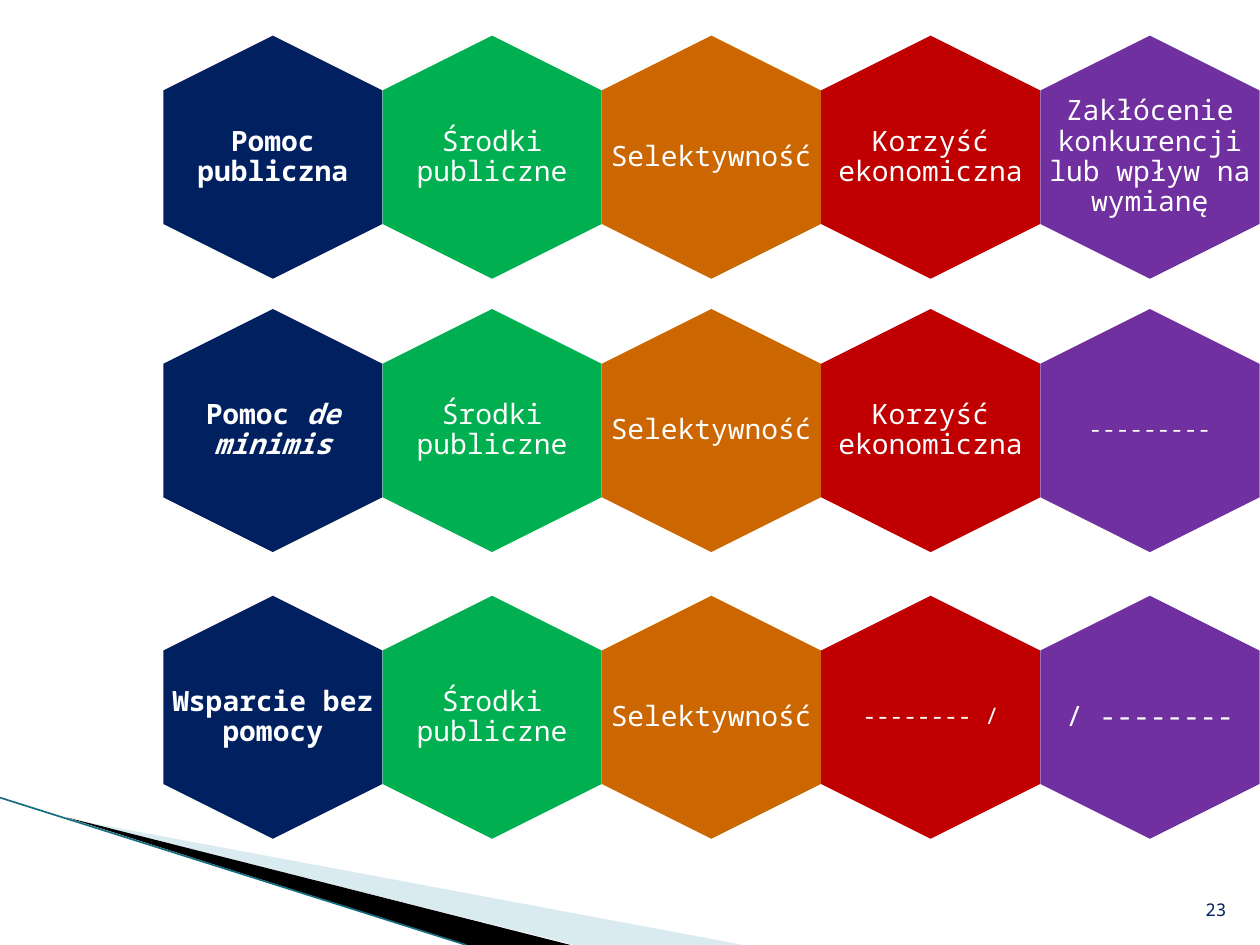
import dataclasses
import typing

import lxml.etree
import pptx
import pptx.dml.color
import pptx.enum.shapes
import pptx.enum.text
import pptx.oxml
import pptx.oxml.ns
import pptx.util

Cm = pptx.util.Cm
Pt = pptx.util.Pt


@dataclasses.dataclass(frozen=True)
class Theme:
    font: str = "Noto Sans Mono"
    white: str = "FFFFFF"
    navy: str = "002060"
    black: str = "000000"
    pale_blue: str = "A0CBDC"
    teal: str = "146E82"
    columns: tuple[str, ...] = ("002060", "00B050", "CC6600", "C00000", "7030A0")
    label_size: float = 16
    dash_size: float = 13
    number_size: float = 10


class TextRun(typing.NamedTuple):
    text: str
    bold: bool = False
    italic: bool = False


class Label(typing.NamedTuple):
    runs: tuple[TextRun, ...]
    small: bool = False


class AidRow(typing.NamedTuple):
    center: float
    labels: tuple[Label, ...]


class Box(typing.NamedTuple):
    left: float
    top: float
    width: float
    height: float


THEME = Theme()
FIRST_CENTER = 5.5
HEXAGON_LENGTH = 4.9
HEXAGON_WIDTH = 4.42
LABEL_HEIGHT = 3.38
SMALL_LABEL_WIDTH = 3.05


def plain(text: str, small: bool = False) -> Label:
    return Label((TextRun(text),), small)


def heading(text: str, italic_text: str = "") -> Label:
    runs = (TextRun(text, bold=True),)
    if italic_text:
        runs += (TextRun(italic_text, bold=True, italic=True),)
    return Label(runs)


FUNDS = plain("Środki publiczne")
SELECTIVITY = plain("Selektywność")
BENEFIT = plain("Korzyść ekonomiczna")
DISTORTION = plain("Zakłócenie konkurencji lub wpływ na wymianę")

ROWS = (
    AidRow(3.17, (heading("Pomoc publiczna"), FUNDS, SELECTIVITY, BENEFIT, DISTORTION)),
    AidRow(8.68, (heading("Pomoc ", "de minimis"), FUNDS, SELECTIVITY, BENEFIT,
                  plain("---------", small=True))),
    AidRow(14.46, (heading("Wsparcie bez pomocy"), FUNDS, SELECTIVITY,
                   plain("-------- /", small=True), plain("/ --------"))),
)


def centered_box(x: float, y: float, width: float, height: float) -> Box:
    return Box(x - width / 2, y - height / 2, width, height)


def rgb(value: str) -> pptx.dml.color.RGBColor:
    return pptx.dml.color.RGBColor.from_string(value)


def paint(shape, color: str) -> None:
    shape.shadow.inherit = False
    shape.fill.solid()
    shape.fill.fore_color.rgb = rgb(color)
    shape.line.fill.background()


def add_text(shapes, box: Box, runs: tuple[TextRun, ...], size: float, color: str):
    text_box = shapes.add_textbox(*map(Cm, box))
    frame = text_box.text_frame
    frame.word_wrap = True
    paragraph = frame.paragraphs[0]
    for item in runs:
        run = paragraph.add_run()
        run.text = item.text
        run.font.name = THEME.font
        run.font.size = Pt(size)
        run.font.bold = item.bold
        run.font.italic = item.italic
        run.font.color.rgb = rgb(color)
    return frame


def add_hexagon(shapes, x: float, y: float, color: str) -> None:
    box = centered_box(x, y, HEXAGON_LENGTH, HEXAGON_WIDTH)
    hexagon = shapes.add_shape(
        pptx.enum.shapes.MSO_SHAPE.HEXAGON, *map(Cm, box))
    hexagon.rotation = 90
    paint(hexagon, color)


def add_label(shapes, x: float, y: float, label: Label) -> None:
    width = SMALL_LABEL_WIDTH if label.small else HEXAGON_WIDTH
    size = THEME.dash_size if label.small else THEME.label_size
    box = centered_box(x, y, width, LABEL_HEIGHT)
    frame = add_text(shapes, box, label.runs, size, THEME.white)
    frame.vertical_anchor = pptx.enum.text.MSO_ANCHOR.MIDDLE
    frame.margin_left = frame.margin_right = Cm(0.12)
    frame.margin_top = frame.margin_bottom = Cm(0.12)
    paragraph = frame.paragraphs[0]
    paragraph.alignment = pptx.enum.text.PP_ALIGN.CENTER
    paragraph.line_spacing = 0.9
    paragraph.space_after = Pt(size * 0.35)


def add_row(slide, row: AidRow) -> None:
    group = slide.shapes.add_group_shape()
    for index, (label, color) in enumerate(zip(row.labels, THEME.columns)):
        x = FIRST_CENTER + index * HEXAGON_WIDTH
        add_hexagon(group.shapes, x, row.center, color)
        add_label(group.shapes, x, row.center, label)


def add_wedge(slide, points: list[tuple[float, float]], color: str,
              opacity: int = 100) -> None:
    corners = [(Cm(x), Cm(y)) for x, y in points]
    builder = slide.shapes.build_freeform(*corners[0])
    builder.add_line_segments(corners[1:])
    wedge = builder.convert_to_shape()
    paint(wedge, color)
    if opacity < 100:
        fill = wedge.fill._xPr.find(".//" + pptx.oxml.ns.qn("a:srgbClr"))
        alpha = lxml.etree.SubElement(fill, pptx.oxml.ns.qn("a:alpha"))
        alpha.set("val", str(opacity * 1000))


def add_edge_line(slide) -> None:
    line = slide.shapes.add_connector(
        pptx.enum.shapes.MSO_CONNECTOR.STRAIGHT,
        Cm(0), Cm(16.08), Cm(9.4), Cm(19.05))
    line.line.color.rgb = rgb(THEME.teal)
    line.line.width = Pt(0.95)
    lxml.etree.SubElement(line._element.spPr, pptx.oxml.ns.qn("a:effectLst"))


def add_slide_number(slide) -> None:
    frame = add_text(slide.shapes, Box(19.05, 17.65, 5.92, 1.02),
                     (TextRun("23"),), THEME.number_size, THEME.navy)
    frame.vertical_anchor = pptx.enum.text.MSO_ANCHOR.BOTTOM
    frame.paragraphs[0].alignment = pptx.enum.text.PP_ALIGN.RIGHT


def main() -> None:
    """Build the slide comparing the criteria of three kinds of public support."""
    presentation = pptx.Presentation()
    presentation.slide_width = Cm(25.4)
    presentation.slide_height = Cm(19.05)
    slide = presentation.slides.add_slide(presentation.slide_layouts[6])
    add_wedge(slide, [(1.4, 16.51), (14.99, 19.05), (11.58, 19.05)],
              THEME.pale_blue, opacity=40)
    add_wedge(slide, [(1.35, 16.48), (11.5, 19.05), (9.4, 19.05)], THEME.black)
    add_edge_line(slide)
    for row in ROWS:
        add_row(slide, row)
    add_slide_number(slide)
    presentation.save("out.pptx")


if __name__ == "__main__":
    main()
